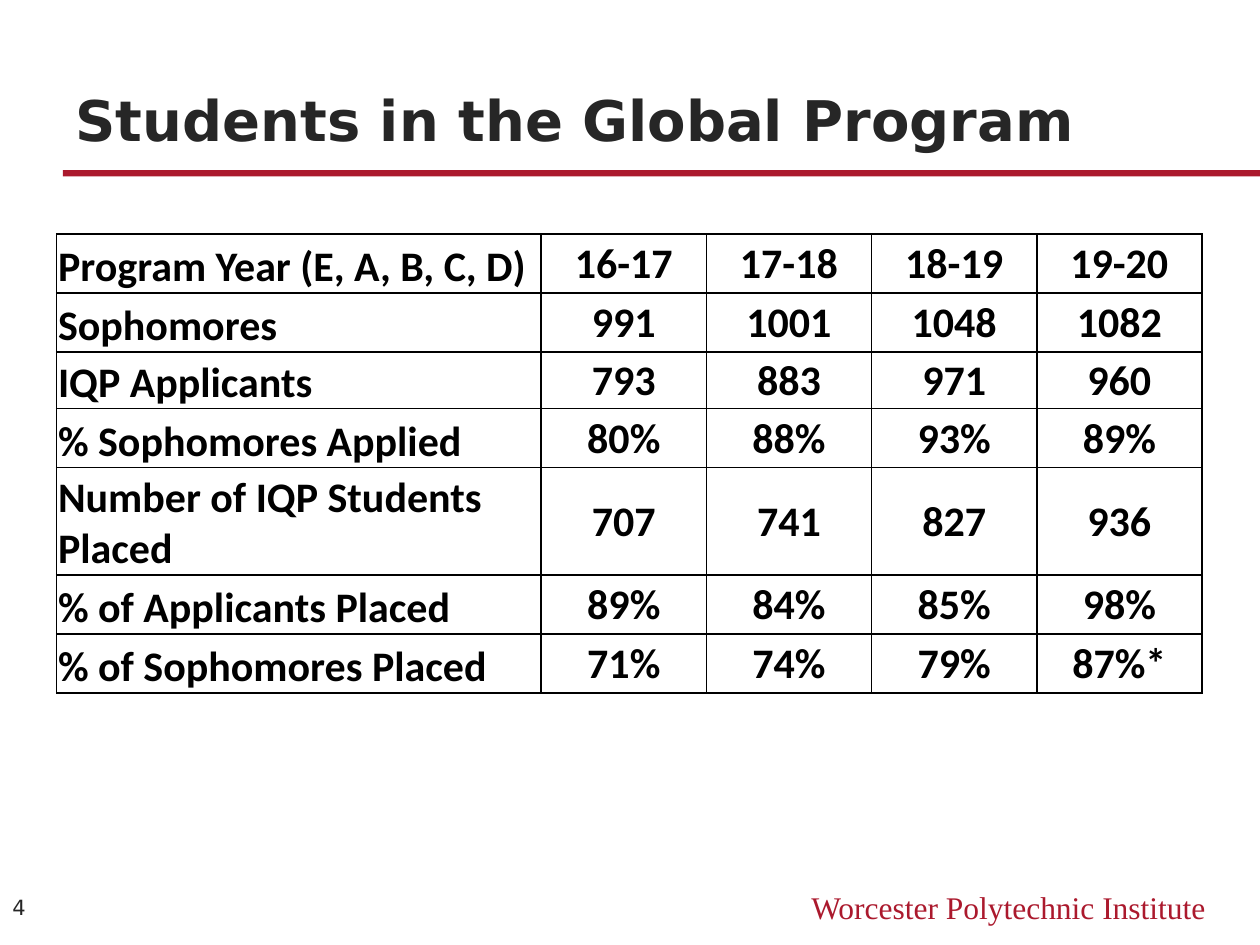
import pptx
import pptx.dml.color
import pptx.enum.shapes
import pptx.enum.text
import pptx.oxml
import pptx.oxml.ns
import pptx.util
from pptx.util import Cm

ANCHOR = pptx.enum.text.MSO_ANCHOR
ALIGN = pptx.enum.text.PP_ALIGN

CRIMSON = "AB192D"
CHARCOAL = "262626"
BLACK = "000000"

ENROLLMENT = [
    ("Program Year (E, A, B, C, D)", "16-17", "17-18", "18-19", "19-20"),
    ("Sophomores", "991", "1001", "1048", "1082"),
    ("IQP Applicants", "793", "883", "971", "960"),
    ("% Sophomores Applied", "80%", "88%", "93%", "89%"),
    ("Number of IQP Students Placed", "707", "741", "827", "936"),
    ("% of Applicants Placed", "89%", "84%", "85%", "98%"),
    ("% of Sophomores Placed", "71%", "74%", "79%", "87%*"),
]
COLUMN_WIDTHS = [9.77] + [3.33] * 4
ROW_HEIGHTS = [1.19, 1.19, 1.14, 1.19, 2.16, 1.19, 1.19]


def color(value):
    return pptx.dml.color.RGBColor.from_string(value)


def style_paragraph(paragraph, size, font_name, font_color, bold=False, align=ALIGN.LEFT):
    paragraph.alignment = align
    paragraph.font.size = pptx.util.Pt(size)
    paragraph.font.name = font_name
    paragraph.font.bold = bold
    paragraph.font.color.rgb = color(font_color)


def add_text(slide, box, text, anchor, *style, **options):
    text_box = slide.shapes.add_textbox(*map(Cm, box))
    frame = text_box.text_frame
    frame.word_wrap = True
    frame.vertical_anchor = anchor
    frame.text = text
    style_paragraph(frame.paragraphs[0], *style, **options)


def add_rule(slide, box):
    rule = slide.shapes.add_shape(
        pptx.enum.shapes.MSO_SHAPE.RECTANGLE, *map(Cm, box))
    rule.shadow.inherit = False
    rule.fill.solid()
    rule.fill.fore_color.rgb = color(CRIMSON)
    rule.line.fill.background()


def set_borders(cell, line_color, width):
    properties = cell._tc.get_or_add_tcPr()
    for position, side in enumerate(("lnL", "lnR", "lnT", "lnB")):
        border = pptx.oxml.parse_xml(
            f'<a:{side} {pptx.oxml.ns.nsdecls("a")} w="{pptx.util.Pt(width)}">'
            f'<a:solidFill><a:srgbClr val="{line_color}"/></a:solidFill></a:{side}>')
        properties.insert(position, border)


def fill_cell(cell, text, is_label):
    cell.text = text
    cell.fill.background()
    cell.margin_left = cell.margin_right = cell.margin_top = Cm(0.03)
    cell.margin_bottom = 0
    cell.vertical_anchor = ANCHOR.BOTTOM if is_label else ANCHOR.MIDDLE
    style_paragraph(cell.text_frame.paragraphs[0], 24, "Calibri", BLACK, bold=True,
                    align=ALIGN.LEFT if is_label else ALIGN.CENTER)
    set_borders(cell, BLACK, 1)


def add_enrollment_table(slide, left, top):
    table = slide.shapes.add_table(
        len(ENROLLMENT), len(COLUMN_WIDTHS), Cm(left), Cm(top),
        Cm(sum(COLUMN_WIDTHS)), Cm(sum(ROW_HEIGHTS))).table
    table.horz_banding = False
    for column, width in zip(table.columns, COLUMN_WIDTHS):
        column.width = Cm(width)
    for row, height, values in zip(table.rows, ROW_HEIGHTS, ENROLLMENT):
        row.height = Cm(height)
        for index, (cell, value) in enumerate(zip(row.cells, values)):
            fill_cell(cell, value, is_label=index == 0)


def main():
    presentation = pptx.Presentation()
    presentation.slide_width = Cm(25.4)
    presentation.slide_height = Cm(19.05)
    slide = presentation.slides.add_slide(presentation.slide_layouts[6])

    add_rule(slide, (1.27, 3.43, 24.13, 0.13))
    add_text(slide, (15.24, 17.78, 9.32, 1.02), "Worcester Polytechnic Institute",
             ANCHOR.TOP, 18, "Times New Roman", CRIMSON, align=ALIGN.RIGHT)
    add_text(slide, (1.27, 0.97, 22.86, 2.24), "Students in the Global Program",
             ANCHOR.BOTTOM, 32, "DejaVu Sans", CHARCOAL, bold=True)
    add_enrollment_table(slide, 1.14, 4.72)
    add_text(slide, (0, 17.75, 1.27, 1.09), "4",
             ANCHOR.MIDDLE, 12, "DejaVu Sans", CHARCOAL)

    presentation.save("out.pptx")


if __name__ == "__main__":
    main()
